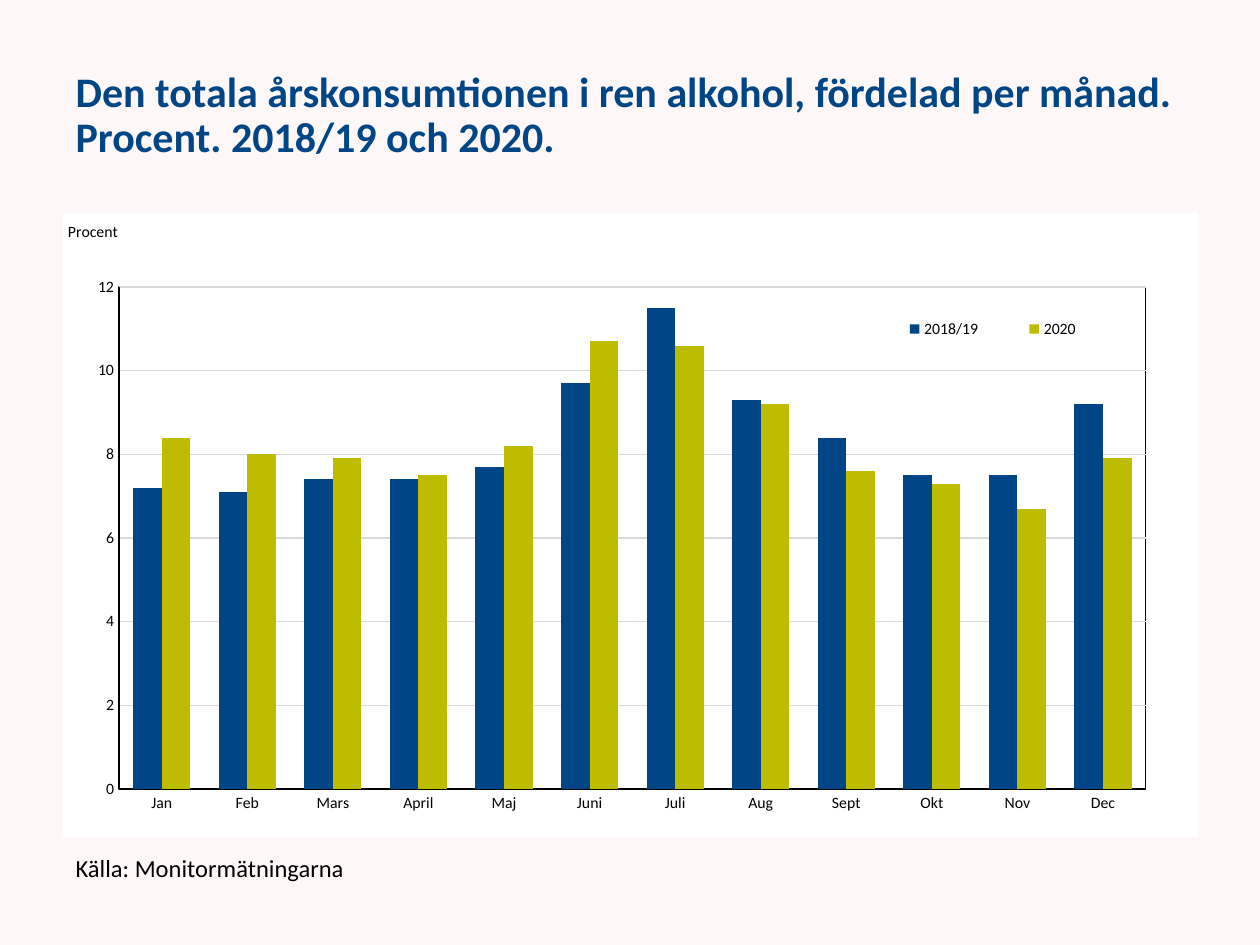
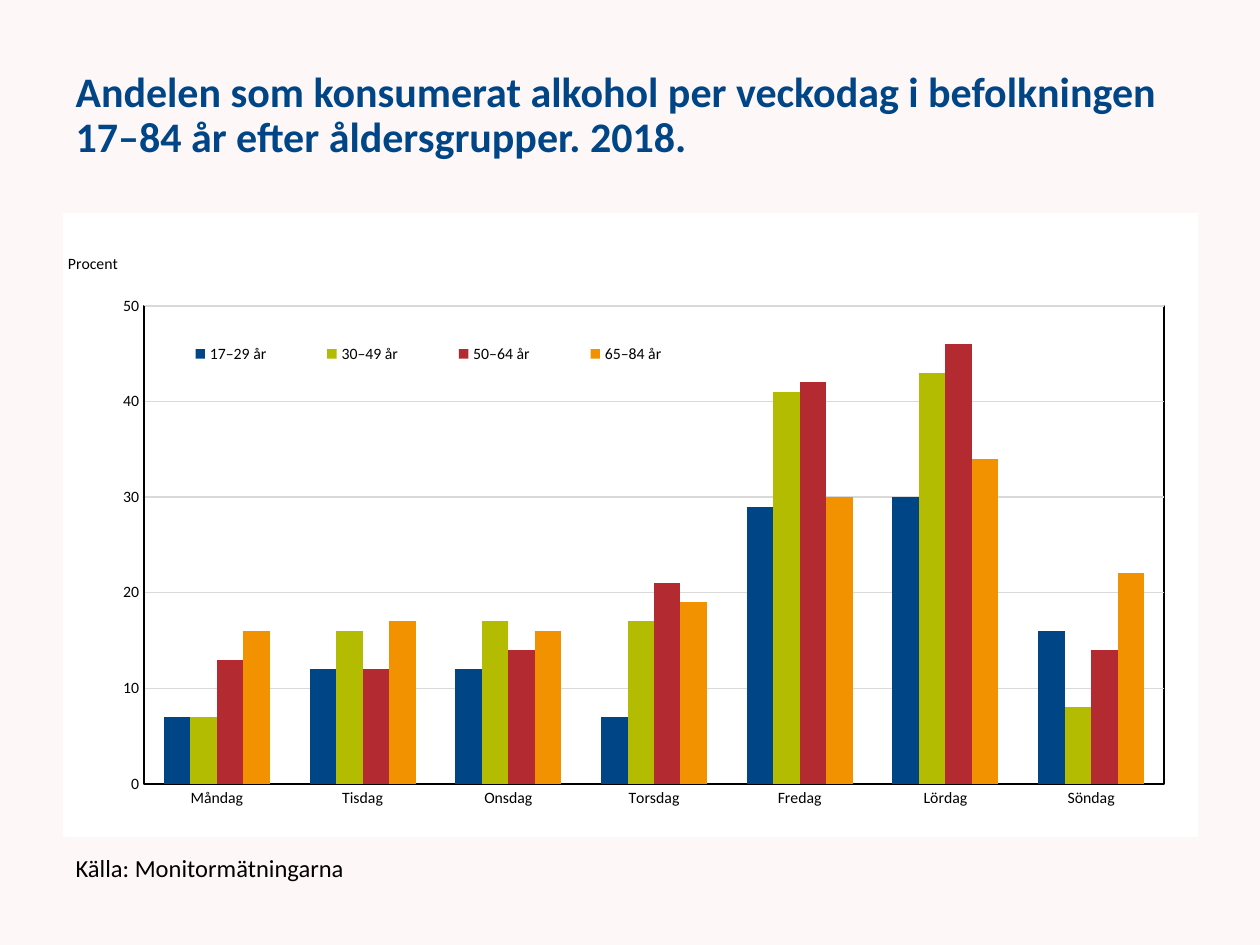
"""Build two slides on alcohol use by month and by weekday."""
import pptx
import pptx.util
import pptx.chart.data
import pptx.dml.color
import pptx.enum.chart
import pptx.enum.text
import pptx.oxml
import pptx.oxml.ns

SCALE = 914400 / 126
FONT = "Calibri"
COLORS = {
    "back": "FEF7F7", "white": "FFFFFF", "black": "000000", "grid": "D9D9D9",
    "blue": "004687", "olive": "BEBC00", "lime": "B3BC00",
    "red": "B32B31", "orange": "F29200",
}
TITLE_BOX = (63, 38, 1134, 157)
SOURCE_BOX = (63, 861, 567, 46)
CHART_BOX = (63, 213, 1135, 624)
SOURCE = "Källa: Monitormätningarna"
qn = pptx.oxml.ns.qn
NS = pptx.oxml.ns.nsdecls("c", "a")


def px(count):
    return pptx.util.Emu(round(count * SCALE))


def color(name):
    return pptx.dml.color.RGBColor.from_string(COLORS[name])


def fill_xml(name):
    return f'<a:solidFill><a:srgbClr val="{COLORS[name]}"/></a:solidFill>'


def style(font, size, tint="black", bold=False):
    font.name, font.size, font.bold = FONT, pptx.util.Pt(size), bold
    font.color.rgb = color(tint)


def rule(line, tint):
    line.color.rgb = color(tint)
    line.width = pptx.util.Pt(0.75)


def place(parent, index, box):
    old = parent.find(qn("c:layout"))
    if old is not None:
        parent.remove(old)
    sizes = (CHART_BOX[2], CHART_BOX[3]) * 2
    parts = "".join(f'<c:{key} val="{part / full:.4f}"/>'
                    for key, part, full in zip("xywh", box, sizes))
    target = '<c:layoutTarget val="inner"/>' if index == 0 else ""
    modes = '<c:xMode val="edge"/><c:yMode val="edge"/>'
    parent.insert(index, pptx.oxml.parse_xml(
        f"<c:layout {NS}><c:manualLayout>{target}{modes}{parts}"
        "</c:manualLayout></c:layout>"))


class Deck:
    def __init__(self):
        self.file = pptx.Presentation()
        self.file.slide_width, self.file.slide_height = px(1260), px(945)
        self.slide = None

    def page(self, title):
        self.slide = self.file.slides.add_slide(self.file.slide_layouts[1])
        fill = self.slide.background.fill
        fill.solid()
        fill.fore_color.rgb = color("back")
        anchor = pptx.enum.text.MSO_ANCHOR
        self.text(0, TITLE_BOX, title, anchor.MIDDLE, 24, "blue", True)
        frame = self.text(1, SOURCE_BOX, SOURCE, anchor.BOTTOM, 14)
        frame.margin_top, frame.margin_bottom = 0, px(24)

    def text(self, index, box, words, anchor, size, tint="black", bold=False):
        shape = self.slide.placeholders[index]
        shape.left, shape.top, shape.width, shape.height = map(px, box)
        frame = shape.text_frame
        frame.text = words
        frame.word_wrap = True
        frame.auto_size = pptx.enum.text.MSO_AUTO_SIZE.NONE
        frame.vertical_anchor = anchor
        line = frame.paragraphs[0]
        line.alignment = pptx.enum.text.PP_ALIGN.LEFT
        line.line_spacing, line.space_before = 0.9, pptx.util.Pt(0)
        props = line._p.get_or_add_pPr()
        props.set("marL", "0")
        props.set("indent", "0")
        props.append(pptx.oxml.parse_xml(f"<a:buNone {NS}/>"))
        style(line.runs[0].font, size, tint, bold)
        return frame

    def chart(self, cats, rows, top, step, gap, plot_box, key_box, unit_at):
        data = pptx.chart.data.CategoryChartData(number_format="General")
        data.categories = cats
        for name, tint, vals in rows:
            data.add_series(name, vals)
        kind = pptx.enum.chart.XL_CHART_TYPE.COLUMN_CLUSTERED
        chart = self.slide.shapes.add_chart(
            kind, *map(px, CHART_BOX), data).chart
        chart.has_title = False
        style(chart.font, 10)
        plot = chart.plots[0]
        plot.gap_width, plot.overlap, plot.vary_by_categories = gap, 0, False
        for series, (name, tint, vals) in zip(plot.series, rows):
            series.format.fill.solid()
            series.format.fill.fore_color.rgb = color(tint)
        self.axes(chart, top, step, unit_at)
        self.legend(chart, key_box)
        self.area(chart, plot_box)

    def axes(self, chart, top, step, unit_at):
        for axis in (chart.category_axis, chart.value_axis):
            axis.major_tick_mark = pptx.enum.chart.XL_TICK_MARK.NONE
            axis.minor_tick_mark = pptx.enum.chart.XL_TICK_MARK.NONE
            style(axis.tick_labels.font, 9)
            rule(axis.format.line, "black")
        axis.minimum_scale, axis.maximum_scale, axis.major_unit = 0, top, step
        axis.has_major_gridlines = True
        rule(axis.major_gridlines.format.line, "grid")
        axis.tick_labels.number_format = "0"
        axis.tick_labels.number_format_is_linked = False
        frame = axis.axis_title.text_frame
        frame.text = "Procent"
        style(frame.paragraphs[0].runs[0].font, 9)
        node = axis.axis_title._element
        body = node.find(".//" + qn("a:bodyPr"))
        body.set("rot", "0")
        body.set("vert", "horz")
        place(node, 1, unit_at)

    def legend(self, chart, box):
        chart.has_legend = True
        legend = chart.legend
        legend.position = pptx.enum.chart.XL_LEGEND_POSITION.BOTTOM
        legend.include_in_layout = False
        style(legend.font, 9)
        place(legend._element, 1, box)

    def area(self, chart, box):
        root = chart._chartSpace.find(qn("c:chart"))
        root.addnext(pptx.oxml.parse_xml(
            f"<c:spPr {NS}>{fill_xml('white')}<a:ln><a:noFill/></a:ln></c:spPr>"))
        area = root.find(qn("c:plotArea"))
        place(area, 0, box)
        area.append(pptx.oxml.parse_xml(
            f'<c:spPr {NS}><a:noFill/><a:ln w="9525">{fill_xml("black")}'
            "</a:ln></c:spPr>"))


def main():
    deck = Deck()
    deck.page("Den totala årskonsumtionen i ren alkohol, fördelad per månad. "
              "Procent. 2018/19 och 2020.")
    deck.chart(
        ["Jan", "Feb", "Mars", "April", "Maj", "Juni",
         "Juli", "Aug", "Sept", "Okt", "Nov", "Dec"],
        [("2018/19", "blue",
          [7.2, 7.1, 7.4, 7.4, 7.7, 9.7, 11.5, 9.3, 8.4, 7.5, 7.5, 9.2]),
         ("2020", "olive",
          [8.4, 8, 7.9, 7.5, 8.2, 10.7, 10.6, 9.2, 7.6, 7.3, 6.7, 7.9])],
        top=12, step=2, gap=100, plot_box=(56, 74, 1027, 502),
        key_box=(801, 101, 258, 30), unit_at=(2, 5))
    deck.page("Andelen som konsumerat alkohol per veckodag i befolkningen "
              "17–84 år efter åldersgrupper. 2018.")
    deck.chart(
        ["Måndag", "Tisdag", "Onsdag", "Torsdag", "Fredag", "Lördag", "Söndag"],
        [("17–29 år", "blue", [7, 12, 12, 7, 29, 30, 16]),
         ("30–49 år", "lime", [7, 16, 17, 17, 41, 43, 8]),
         ("50–64 år", "red", [13, 12, 14, 21, 42, 46, 14]),
         ("65–84 år", "orange", [16, 17, 16, 19, 30, 34, 22])],
        top=50, step=10, gap=150, plot_box=(81, 93, 1020, 478),
        key_box=(77, 126, 577, 30), unit_at=(2, 37))
    deck.file.save("out.pptx")


if __name__ == "__main__":
    main()
